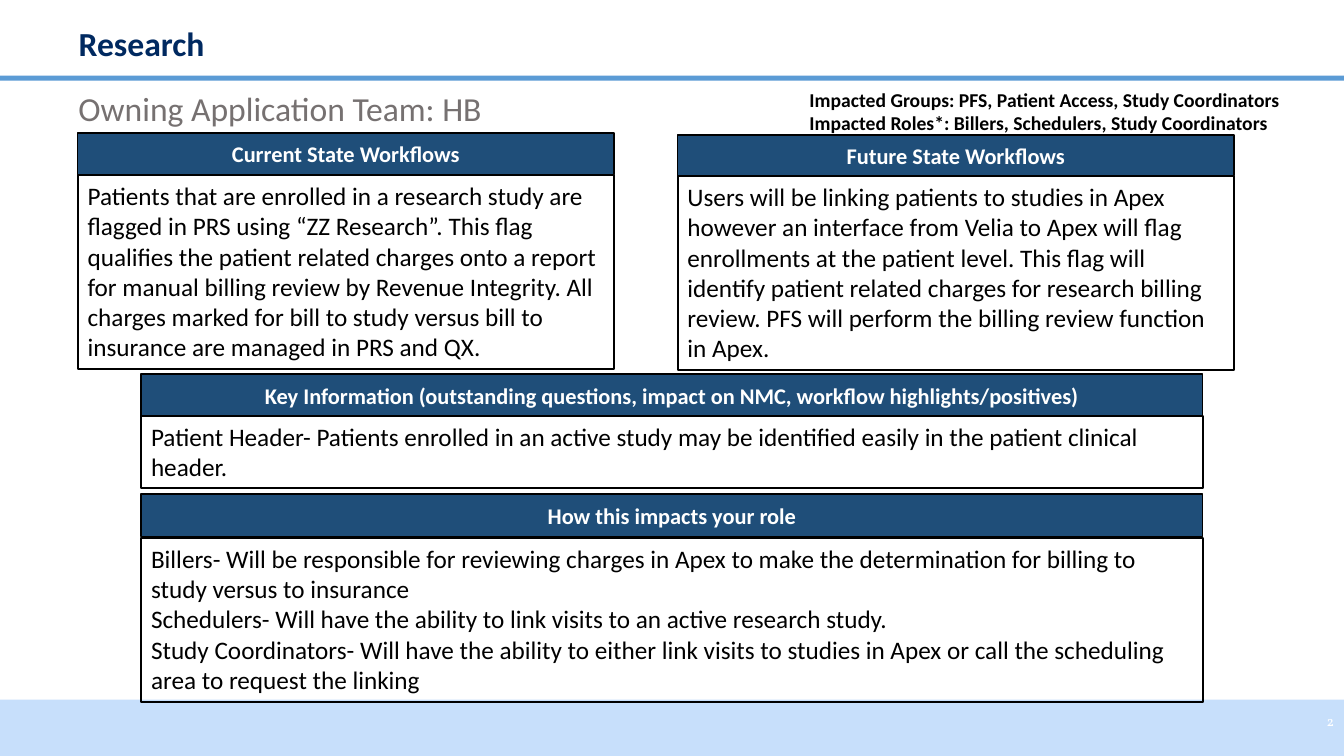
from dataclasses import dataclass

from pptx import Presentation
from pptx.dml.color import RGBColor
from pptx.enum.shapes import MSO_SHAPE
from pptx.enum.text import MSO_ANCHOR as ANCHOR, PP_ALIGN as ALIGN
from pptx.util import Inches, Pt


@dataclass(frozen=True)
class Theme:
    font: str = "Calibri"
    number_font: str = "Vollkorn"
    navy: str = "002960"
    header: str = "1F4E79"
    rule: str = "5B9BD5"
    footer: str = "C7DFFB"
    gray: str = "767171"
    black: str = "000000"
    white: str = "FFFFFF"
    heading_size: int = 24
    body_size: int = 18
    header_size: int = 16
    groups_size: int = 14
    number_size: int = 10


T = Theme()


def add_box(box, fill=None, line=None):
    """Add a rectangle at box (left, top, width, height in inches)."""
    sp = s.shapes.add_shape(MSO_SHAPE.RECTANGLE, *map(Inches, box))
    sp.shadow.inherit = False
    if fill:
        sp.fill.solid()
        sp.fill.fore_color.rgb = RGBColor.from_string(fill)
    else:
        sp.fill.background()
    if line:
        sp.line.color.rgb = RGBColor.from_string(T.black)
        sp.line.width = Pt(line)
    else:
        sp.line.fill.background()
    return sp


def write(sp, *lines, size, color=T.black, bold=False, font=T.font,
          align=ALIGN.LEFT, anchor=ANCHOR.TOP):
    """Put one paragraph per line into the shape."""
    tf = sp.text_frame
    tf.word_wrap = True
    tf.vertical_anchor = anchor
    tf.text = "\n".join(lines)
    for p in tf.paragraphs:
        p.alignment = align
        p.font.name = font
        p.font.size = Pt(size)
        p.font.bold = bold
        p.font.color.rgb = RGBColor.from_string(color)


prs = Presentation()
prs.slide_width, prs.slide_height = Inches(13.33), Inches(7.5)
s = prs.slides.add_slide(prs.slide_layouts[5])

# Page frame
add_box((0, 6.94, 13.33, 0.56), fill=T.footer)
add_box((0, 0.75, 13.33, 0.05), fill=T.rule)

title = s.shapes.title
title.left, title.top, title.width, title.height = map(Inches, (0.68, 0.14, 11.01, 0.62))
write(title, "Research", size=T.heading_size, color=T.navy, bold=True, anchor=ANCHOR.MIDDLE)
title.text_frame.paragraphs[0].line_spacing = 0.9

number = s.shapes.add_textbox(*map(Inches, (10.33, 6.95, 3, 0.4)))
write(number, "2", size=T.number_size, color=T.white, font=T.number_font,
      align=ALIGN.RIGHT, anchor=ANCHOR.MIDDLE)

team = s.shapes.add_textbox(*map(Inches, (0.68, 0.82, 4.47, 0.5)))
write(team, "Owning Application Team: HB", size=T.heading_size, color=T.gray)

groups = s.shapes.add_textbox(*map(Inches, (7.93, 0.82, 5.28, 0.81)))
write(groups, "Impacted Groups: PFS, Patient Access, Study Coordinators",
      "Impacted Roles*: Billers, Schedulers, Study Coordinators",
      size=T.groups_size, bold=True)

# Sections: left, width, header top, header height, body top, body height, heading, lines
sections = [
    (0.77, 5.32, 1.32, 0.41, 1.74, 1.92, "Current State Workflows", [
        "Patients that are enrolled in a research study are flagged in PRS using “ZZ Research”. "
        "This flag qualifies the patient related charges onto a report for manual billing review "
        "by Revenue Integrity. All charges marked for bill to study versus bill to insurance are "
        "managed in PRS and QX."]),
    (6.72, 5.52, 1.34, 0.4, 1.75, 1.92, "Future State Workflows", [
        "Users will be linking patients to studies in Apex however an interface from Velia to "
        "Apex will flag enrollments at the patient level. This flag will identify patient related "
        "charges for research billing review. PFS will perform the billing review function in "
        "Apex."]),
    (1.4, 10.53, 3.71, 0.42, 4.13, 0.71,
     "Key Information (outstanding questions, impact on NMC, workflow highlights/positives)", [
         "Patient Header- Patients enrolled in an active study may be identified easily in the "
         "patient clinical header."]),
    (1.4, 10.53, 4.9, 0.42, 5.34, 1.62, "How this impacts your role", [
        "Billers- Will be responsible for reviewing charges in Apex to make the determination for "
        "billing to study versus to insurance",
        "Schedulers- Will have the ability to link visits to an active research study.",
        "Study Coordinators- Will have the ability to either link visits to studies in Apex or "
        "call the scheduling area to request the linking"]),
]
for left, width, head_top, head_height, body_top, body_height, heading, lines in sections:
    head = add_box((left, head_top, width, head_height), fill=T.header, line=1)
    write(head, heading, size=T.header_size, color=T.white, bold=True,
          align=ALIGN.CENTER, anchor=ANCHOR.MIDDLE)
    body = add_box((left, body_top, width, body_height), line=1.5)
    write(body, *lines, size=T.body_size)

prs.save("out.pptx")
